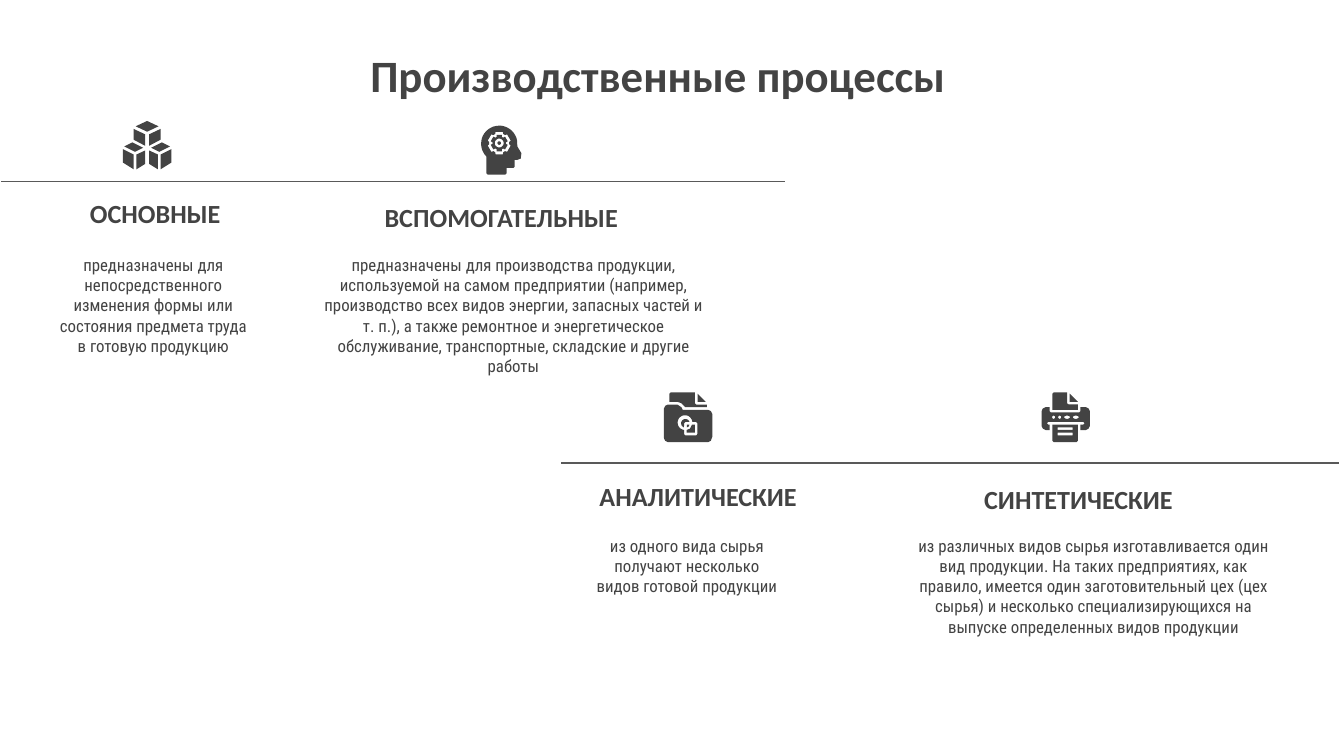
import math
from dataclasses import dataclass

import lxml.etree
import pptx
import pptx.dml.color
import pptx.enum.shapes
import pptx.enum.text
import pptx.oxml.ns
import pptx.util

COLUMNS, ROWS = 100, 56.25
CELL = pptx.util.Inches(0.1)
ICON_STEPS = 100


@dataclass(frozen=True)
class Theme:
    ink: str = "434343"
    rule: str = "595959"
    heading_font: str = "Calibri"
    body_font: str = "Roboto Condensed"
    title_size: int = 24
    heading_size: int = 14
    body_size: int = 9
    rule_width: float = 0.75


THEME = Theme()

PROCESSES = [
    ("ОСНОВНЫЕ", (1.8, 13.3, 19.5, 4.7),
     "предназначены для непосредственного изменения формы или состояния предмета труда "
     "в готовую продукцию", (3.3, 17.95, 16.2, 11)),
    ("ВСПОМОГАТЕЛЬНЫЕ", (27.4, 13.65, 19.8, 4.7),
     "предназначены для производства продукции, используемой на самом предприятии "
     "(например, производство всех видов энергии, запасных частей и т. п.), а также "
     "ремонтное и энергетическое обслуживание, транспортные, складские и другие работы",
     (22.9, 17.95, 30.6, 11)),
    ("АНАЛИТИЧЕСКИЕ", (42.2, 34.4, 19.5, 4.7),
     "из одного вида сырья получают несколько видов готовой продукции",
     (43, 38.85, 16.2, 11)),
    ("СИНТЕТИЧЕСКИЕ", (70.5, 34.6, 19.5, 4.7),
     "из различных видов сырья изготавливается один вид продукции. На таких предприятиях, "
     "как правило, имеется один заготовительный цех (цех сырья) и несколько "
     "специализирующихся на выпуске определенных видов продукции", (67.3, 38.85, 28.1, 11)),
]


def cells(count):
    return pptx.util.Emu(round(count * CELL))


def color(code):
    return pptx.dml.color.RGBColor.from_string(code)


def place(box, area):
    box.left, box.top, box.width, box.height = map(cells, area)


def write(box, text, font_name, size, bold, anchor):
    frame = box.text_frame
    frame.word_wrap = True
    frame.auto_size = pptx.enum.text.MSO_AUTO_SIZE.NONE
    frame.vertical_anchor = anchor
    frame.margin_left = frame.margin_right = frame.margin_top = frame.margin_bottom = CELL
    para = frame.paragraphs[0]
    para.text = text
    para.alignment = pptx.enum.text.PP_ALIGN.CENTER
    para.space_before = pptx.util.Pt(0)
    para.font.name = font_name
    para.font.size = pptx.util.Pt(size)
    para.font.bold = bold
    para.font.color.rgb = color(THEME.ink)


def add_title(page, text, area):
    title = page.shapes.title
    place(title, area)
    write(title, text, THEME.heading_font, THEME.title_size, True,
          pptx.enum.text.MSO_ANCHOR.TOP)


def add_process(page, heading, heading_area, text, text_area):
    box = page.shapes.add_textbox(*map(cells, heading_area))
    write(box, heading, THEME.heading_font, THEME.heading_size, True,
          pptx.enum.text.MSO_ANCHOR.BOTTOM)
    box = page.shapes.add_textbox(*map(cells, text_area))
    write(box, text, THEME.body_font, THEME.body_size, False,
          pptx.enum.text.MSO_ANCHOR.TOP)


def add_rule(page, start, end, row):
    rule = page.shapes.add_connector(pptx.enum.shapes.MSO_CONNECTOR.STRAIGHT,
                                     cells(start), cells(row), cells(end), cells(row))
    rule.line.color.rgb = color(THEME.rule)
    rule.line.width = pptx.util.Pt(THEME.rule_width)
    lxml.etree.SubElement(rule._element.spPr, pptx.oxml.ns.qn("a:effectLst"))


def arc(x, y, radius, start=0, end=360, height=None):
    tall = height or radius
    steps = 24
    angles = [math.radians(start + (end - start) * step / steps) for step in range(steps + 1)]
    return [(x + radius * math.cos(angle), y + tall * math.sin(angle)) for angle in angles]


def gear(x, y, outer, inner):
    profile = ((-18, outer), (18, outer), (24, inner), (36, inner))
    points = []
    for tooth in range(6):
        for offset, radius in profile:
            angle = math.radians(60 * tooth - 90 + offset)
            points.append((x + radius * math.cos(angle), y + radius * math.sin(angle)))
    return points


def bar(left, top, right, bottom):
    return [(left, top), (right, top), (right, bottom), (left, bottom)]


def cubes_icon():
    faces = [
        [(8, 6), (8, 14), (16.5, 18.5), (16.5, 10)],
        [(7, 16), (1, 19), (9, 23), (15, 20)],
        [(0, 21), (0, 31), (8, 36), (8, 25)],
        [(16.5, 22), (10, 25), (10, 36), (16.5, 32)],
    ]
    mirrored = [[(36 - x, y) for x, y in face] for face in faces]
    lid = [(18, 0), (26.5, 4), (18, 8), (9.5, 4)]
    return [[face] for face in faces + mirrored + [lid]]


def head_icon():
    center = (13.5, 12.5)
    profile = arc(13.5, 13, 13.5, 135, 350) + [
        (27, 15), (30, 20), (29.5, 24), (27, 25), (25, 25), (25, 30), (24, 31),
        (19, 31), (19, 35), (18, 36), (5, 36), (4, 35)]
    return [[profile, gear(*center, 8.8, 7.4)],
            [gear(*center, 6.4, 4.9), arc(*center, 3.3)],
            [arc(*center, 1.3)]]


def folder_icon():
    sheet = [(5, 0), (4, 1), (4, 7), (10, 7), (13, 8), (16, 11), (32, 11), (32, 9),
             (24, 9), (23, 8), (23, 0)]
    folder = [(3, 9), (10, 9), (13, 11), (14, 13), (33, 13), (35, 14), (36, 16), (36, 33),
              (35, 36), (33, 37), (3, 37), (1, 36), (0, 34), (0, 12), (1, 10)]
    window = arc(15.7, 22.5, 5.5, 97, 355) + [
        (24, 22), (25, 23), (25, 31), (24, 32), (16, 32), (15, 31)]
    ring = arc(16, 23, 3.2, 110, 340) + [(16, 22), (15, 23)]
    square = [(21, 24), (23, 24), (23, 30), (17, 30), (17, 28), (19.5, 27)]
    overlap = [(17, 24), (19, 24), (18.3, 25.5), (17, 26)]
    return [[[(25, 1), (25, 7), (31, 7)]], [sheet], [folder, window],
            [ring], [square], [overlap]]


def printer_icon():
    sheet = [(9, 0), (8, 1), (8, 13), (27, 13), (27, 9), (20, 9), (19, 8), (19, 0)]
    body = [(3, 11), (6, 11), (6, 14), (7, 15), (28, 15), (29, 14), (29, 11), (33, 11),
            (35, 12), (36, 14), (36, 25), (35, 27), (33, 28), (29, 28), (29, 24), (31, 24),
            (32, 23), (31, 22), (5, 22), (4, 23), (5, 24), (6, 24), (6, 28), (3, 28),
            (1, 27), (0, 25), (0, 14), (1, 12)]
    lights = [arc(x, 18.5, width, height=1.2)
              for x, width in ((9, 1.1), (13.5, 1.1), (19, 2.2), (25.5, 2.2))]
    printout = [(8, 24), (27, 24), (27, 36), (26, 37), (9, 37), (8, 36)]
    lines = [bar(12, top, 23, top + 2) for top in (26, 30)]
    return [[[(21, 1), (21, 7), (27, 7)]], [sheet], [body, *lights], [printout, *lines]]


def add_icon(page, parts, left, top):
    shapes = []
    for outlines in parts:
        scaled = [[(x * 10, y * 10) for x, y in outline] for outline in outlines]
        builder = page.shapes.build_freeform(*scaled[0][0], scale=CELL / ICON_STEPS)
        builder.add_line_segments(scaled[0][1:], close=True)
        for hole in scaled[1:]:
            builder.move_to(*hole[0])
            builder.add_line_segments(hole[1:], close=True)
        shape = builder.convert_to_shape(cells(left), cells(top))
        shape.shadow.inherit = False
        shape.fill.solid()
        shape.fill.fore_color.rgb = color(THEME.ink)
        shape.line.fill.background()
        shapes.append(shape)
    page.shapes.add_group_shape(shapes)


def main():
    deck = pptx.Presentation()
    deck.slide_width, deck.slide_height = cells(COLUMNS), cells(ROWS)
    page = deck.slides.add_slide(deck.slide_layouts.get_by_name("Title Only"))
    add_title(page, "Производственные процессы", (20.45, 2.55, 57, 7.2))
    for process in PROCESSES:
        add_process(page, *process)
    add_rule(page, 58.4, 0.1, 13.5)
    add_rule(page, 99.6, 41.75, 34.45)
    add_icon(page, head_icon(), 35.8, 9.4)
    add_icon(page, cubes_icon(), 9.15, 9)
    add_icon(page, folder_icon(), 49.4, 29.2)
    add_icon(page, printer_icon(), 77.5, 29.2)
    deck.save("out.pptx")


if __name__ == "__main__":
    main()
